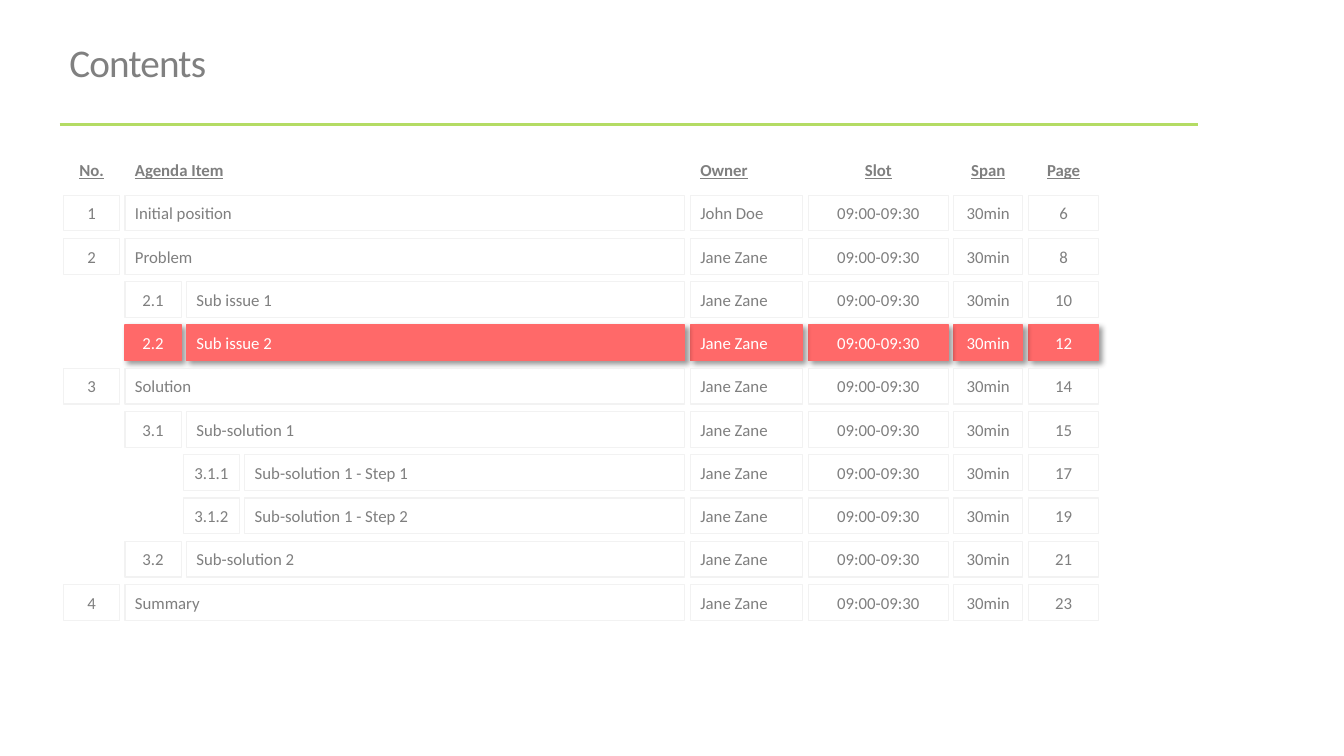
"""Build a contents slide with a three-level agenda."""
from lxml import etree
from pptx import Presentation
from pptx import util as u
from pptx.dml.color import RGBColor
from pptx.enum import shapes, text
from pptx.oxml import parse_xml
from pptx.oxml.ns import nsdecls, qn

COLORS = {
    "grey": "7F7F7F",
    "title": "808080",
    "border": "F2F2F2",
    "accent": "FF6969",
    "white": "FFFFFF",
    "rule": "B4DC64",
}
LEFT, CENTER = text.PP_ALIGN.LEFT, text.PP_ALIGN.CENTER
TOP, PITCH, HEIGHT = 3.83, 1.09, 0.9
NUMBER_LEFTS = [1.6, 3.15, 4.62]
NUMBER_WIDTH, ITEM_OFFSET, ITEM_RIGHT = 1.42, 1.55, 17.26
DETAIL_COLUMNS = [
    (17.4, 2.82, LEFT),
    (20.37, 3.53, CENTER),
    (24.03, 1.75, CENTER),
    (25.93, 1.75, CENTER),
]
HEADER = ("No.", "Agenda Item", "Owner", "Slot", "Span", "Page")
SLOT, SPAN = "09:00-09:30", "30min"
AGENDA = [
    ("1", "Initial position", "John Doe", "6"),
    ("2", "Problem", "Jane Zane", "8"),
    ("2.1", "Sub issue 1", "Jane Zane", "10"),
    ("2.2", "Sub issue 2", "Jane Zane", "12"),
    ("3", "Solution", "Jane Zane", "14"),
    ("3.1", "Sub-solution 1", "Jane Zane", "15"),
    ("3.1.1", "Sub-solution 1 - Step 1", "Jane Zane", "17"),
    ("3.1.2", "Sub-solution 1 - Step 2", "Jane Zane", "19"),
    ("3.2", "Sub-solution 2", "Jane Zane", "21"),
    ("4", "Summary", "Jane Zane", "23"),
]
CURRENT = "2.2"
SHADOW = (
    f'<a:effectLst {nsdecls("a")}><a:outerShdw blurRad="50800" dist="38100" '
    'dir="2700000" algn="tl" rotWithShape="0"><a:srgbClr val="000000">'
    '<a:alpha val="40000"/></a:srgbClr></a:outerShdw></a:effectLst>'
)


class AgendaSlide:
    """Hold the style and the slide being drawn."""

    def __init__(self, page, font="Calibri"):
        self.page = page
        self.font = font

    def color(self, name):
        return RGBColor.from_string(COLORS[name])

    def label(self, box, words, size, color, align=LEFT, bold=False):
        frame = box.text_frame
        frame.word_wrap = True
        frame.vertical_anchor = text.MSO_ANCHOR.MIDDLE
        frame.text = words
        para = frame.paragraphs[0]
        para.alignment = align
        span = para.runs[0]
        span.font.name = self.font
        span.font.size = u.Pt(size)
        span.font.color.rgb = self.color(color)
        if bold:
            span.font.bold = span.font.underline = True
        return span

    def title(self, words):
        box = self.page.shapes.add_textbox(u.Cm(1.5), u.Cm(0.46), u.Cm(28.58), u.Cm(2.36))
        span = self.label(box, words, 28, "title")
        box.text_frame.paragraphs[0].line_spacing = 0.9
        span.font._element.set("spc", "-60")

    def rule(self, left, right, top):
        line = self.page.shapes.add_connector(
            shapes.MSO_CONNECTOR.STRAIGHT, u.Cm(left), u.Cm(top), u.Cm(right), u.Cm(top))
        line.line.color.rgb = self.color("rule")
        line.line.width = u.Pt(2)
        etree.SubElement(line._element.spPr, qn("a:effectLst"))

    def cell(self, words, left, top, width, align, style):
        place = [u.Cm(length) for length in (left, top, width, HEIGHT)]
        if style == "header":
            box = self.page.shapes.add_textbox(*place)
            self.label(box, words, 12, "grey", align, bold=True)
            return box
        box = self.page.shapes.add_shape(shapes.MSO_SHAPE.RECTANGLE, *place)
        box.line.width = u.Pt(0.85)
        if style == "current":
            box.fill.solid()
            box.fill.fore_color.rgb = self.color("accent")
            box.line.color.rgb = self.color("accent")
            box._element.spPr.append(parse_xml(SHADOW))
        else:
            box.fill.background()
            box.line.color.rgb = self.color("border")
            box.shadow.inherit = False
        self.label(box, words, 12, "white" if style == "current" else "grey", align)
        return box

    def number(self, words, left, top, style):
        frame = self.cell(words, left, top, NUMBER_WIDTH, CENTER, style).text_frame
        frame.margin_left = frame.margin_right = 0
        frame.margin_top = frame.margin_bottom = 0
        frame.word_wrap = False

    def row(self, index, values, style):
        number, item, *details = values
        top = TOP + index * PITCH
        for words, (left, width, align) in reversed(list(zip(details, DETAIL_COLUMNS))):
            self.cell(words, left, top, width, align, style)
        level = 0 if style == "header" else number.count(".")
        left = NUMBER_LEFTS[level]
        self.number(number, left, top, style)
        item_left = left + ITEM_OFFSET
        self.cell(item, item_left, top, ITEM_RIGHT - item_left, LEFT, style)


def main():
    deck = Presentation()
    deck.slide_width, deck.slide_height = u.Cm(33.87), u.Cm(19.05)
    contents = AgendaSlide(deck.slides.add_slide(deck.slide_layouts[6]))
    contents.rule(1.5, 30.18, 3.13)
    contents.title("Contents")
    contents.row(0, HEADER, "header")
    for index, (number, item, owner, page) in enumerate(AGENDA, start=1):
        style = "current" if number == CURRENT else "plain"
        contents.row(index, (number, item, owner, SLOT, SPAN, page), style)
    deck.save("out.pptx")


if __name__ == "__main__":
    main()
